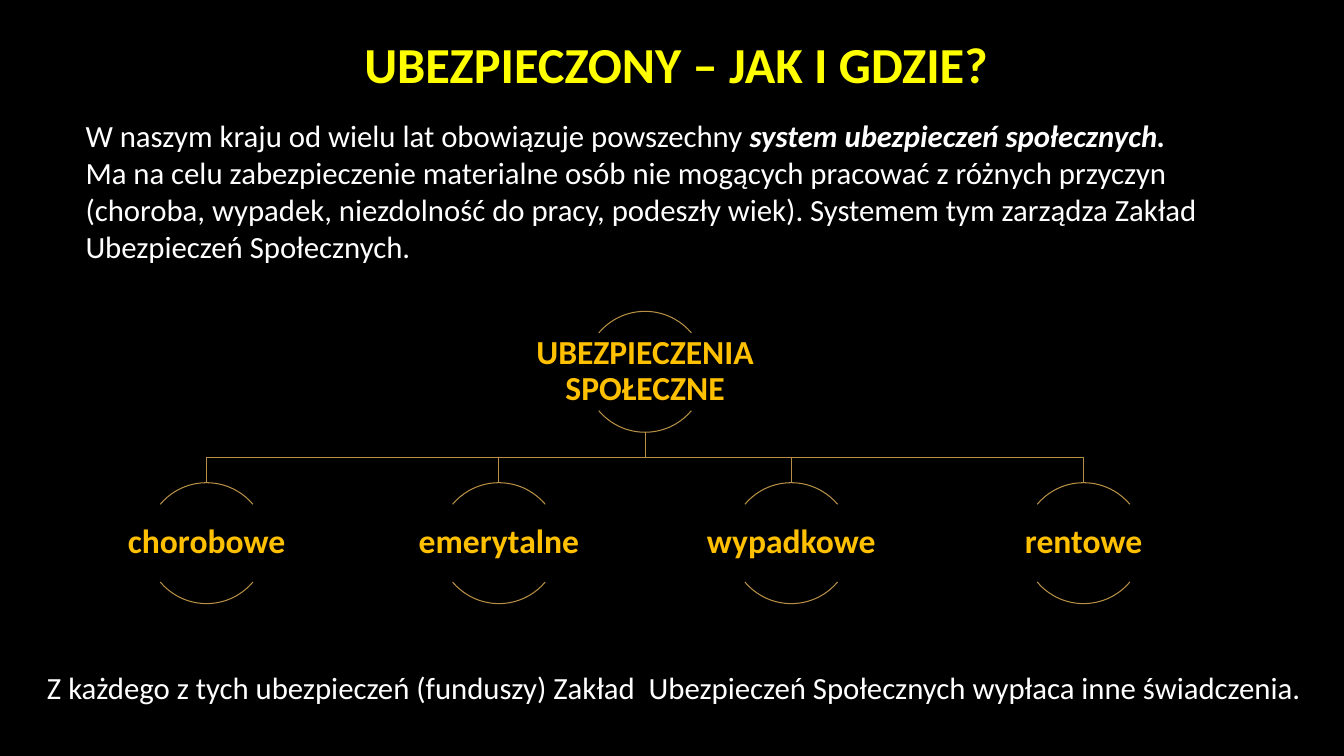
"""Builds a slide on social insurance with a four-branch tree."""
from pptx import Presentation
from pptx import util as u
from pptx.dml import color
from pptx.enum import shapes, text

COLORS = {"bg": "000000", "title": "FFFF00", "body": "FFFFFF",
          "node": "FFC000", "line": "B79046"}
FONT = "Calibri"
CENTER, STEP, SIZE = 460.8, 208.8, 86.4
ROOT_TOP, CHILD_TOP = 222.4, 344.8
ARCS = [(132, 192), (24, 84)]
BRANCHES = ["chorobowe", "emerytalne", "wypadkowe", "rentowe"]


def rgb(name):
    return color.RGBColor.from_string(COLORS[name])


class Deck:
    def __init__(self):
        self.prs = Presentation()
        self.prs.slide_width, self.prs.slide_height = u.Pt(960), u.Pt(540)
        self.s = self.prs.slides.add_slide(self.prs.slide_layouts[6])
        fill = self.s.background.fill
        fill.solid()
        fill.fore_color.rgb = rgb("bg")

    def text(self, box, lines, size, col, bold=False, align=text.PP_ALIGN.LEFT,
             anchor=text.MSO_ANCHOR.MIDDLE, inset=None, spacing=None):
        sp = self.s.shapes.add_textbox(*map(u.Pt, box))
        tf = sp.text_frame
        tf.word_wrap = True
        tf.vertical_anchor = anchor
        if inset is not None:
            tf.margin_left = tf.margin_right = u.Pt(inset)
            tf.margin_top = tf.margin_bottom = u.Pt(inset)
        p = tf.paragraphs[0]
        p.alignment = align
        p.line_spacing = spacing
        for i, line in enumerate(lines):
            if i:
                p.add_line_break()
            for words, strong in line:
                r = p.add_run()
                r.text = words
                f = r.font
                f.name, f.size, f.color.rgb = FONT, u.Pt(size), rgb(col)
                f.bold, f.italic = bold or strong, strong

    def outline(self, sp):
        sp.shadow.inherit = False
        sp.fill.background()
        sp.line.color.rgb = rgb("line")
        sp.line.width = u.Pt(0.75)

    def branch(self, x):
        start, end = ROOT_TOP + SIZE, CHILD_TOP
        mid = (start + end) / 2
        fb = self.s.shapes.build_freeform(u.Pt(CENTER), u.Pt(start))
        points = [(CENTER, mid), (x, mid), (x, end)]
        fb.add_line_segments([(u.Pt(a), u.Pt(b)) for a, b in points], close=False)
        self.outline(fb.convert_to_shape())

    def node(self, x, top, label):
        for angles in ARCS:
            sp = self.s.shapes.add_shape(
                shapes.MSO_SHAPE.ARC, u.Pt(x - SIZE / 2), u.Pt(top),
                u.Pt(SIZE), u.Pt(SIZE))
            sp.adjustments[0], sp.adjustments[1] = angles
            self.outline(sp)
        self.text((x - SIZE, top + 15.4, 2 * SIZE, 55.4), [[(label, False)]],
                  24, "node", True, text.PP_ALIGN.CENTER, inset=1.2, spacing=0.9)


def main():
    d = Deck()
    d.text((69, 6, 828, 78), [[("UBEZPIECZONY – JAK I GDZIE?", False)]],
           36, "title", True, text.PP_ALIGN.CENTER)
    d.text((54, 83, 860, 106), [
        [("W naszym kraju od wielu lat obowiązuje powszechny ", False),
         ("system ubezpieczeń społecznych. ", True)],
        [("Ma na celu zabezpieczenie materialne osób nie mogących pracować "
          "z różnych przyczyn ", False)],
        [("(choroba, wypadek, niezdolność do pracy, podeszły wiek). Systemem tym "
          "zarządza Zakład Ubezpieczeń Społecznych.", False)]], 22, "body")
    xs = [CENTER + (i - 1.5) * STEP for i in range(len(BRANCHES))]
    for x in reversed(xs):
        d.branch(x)
    d.node(CENTER, ROOT_TOP, "UBEZPIECZENIA SPOŁECZNE")
    for x, label in zip(xs, BRANCHES):
        d.node(x, CHILD_TOP, label)
    d.text((26.5, 474, 914.5, 43),
           [[("Z każdego z tych ubezpieczeń (funduszy) Zakład  Ubezpieczeń "
              "Społecznych wypłaca inne świadczenia.", False)]],
           22, "body", anchor=text.MSO_ANCHOR.TOP)
    d.prs.save("out.pptx")


if __name__ == "__main__":
    main()
